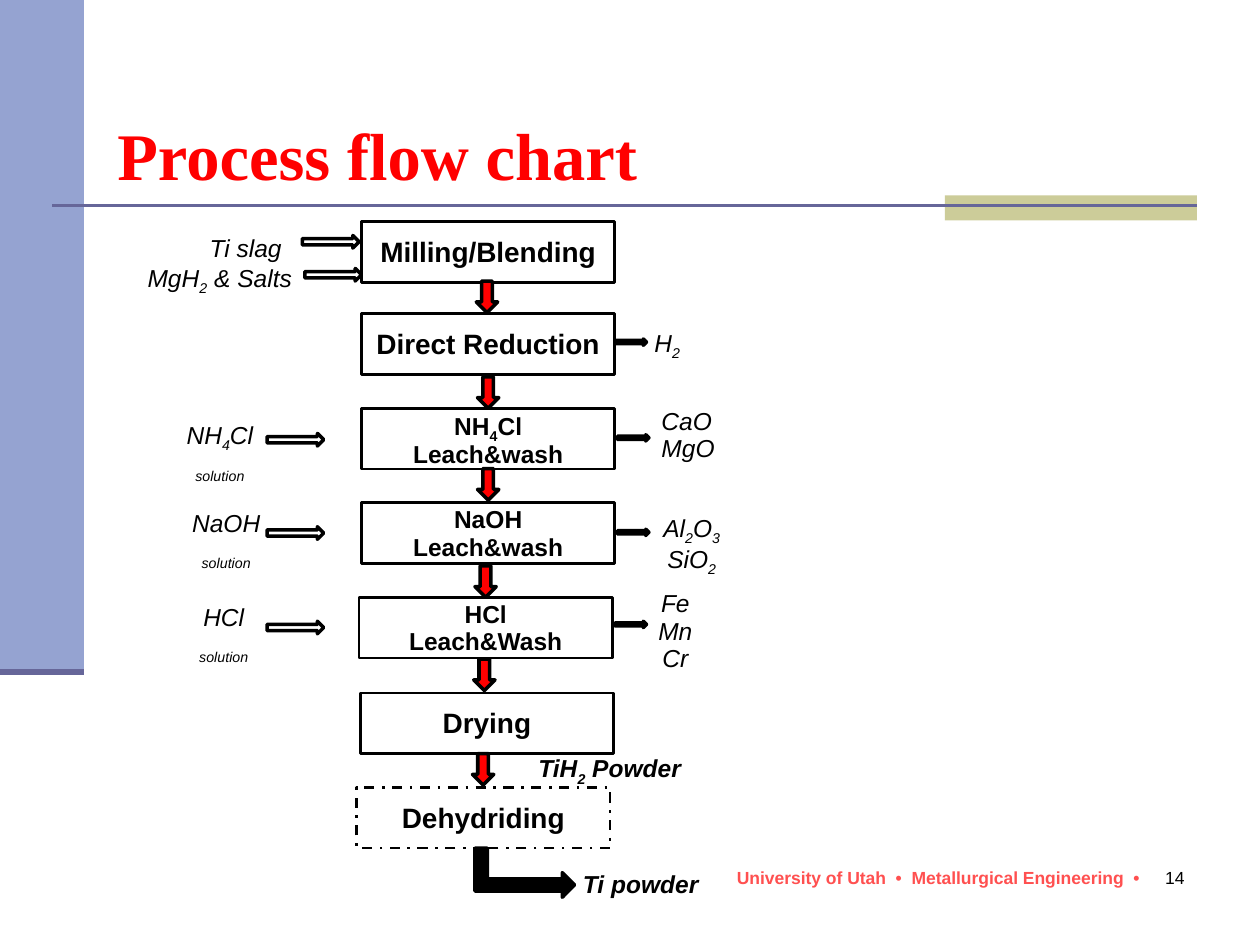
from lxml import etree
from pptx import Presentation
from pptx import util as u
from pptx.dml.color import RGBColor
from pptx.enum import dml, shapes, text
from pptx.oxml.ns import qn

BLACK, WHITE = RGBColor(0, 0, 0), RGBColor(255, 255, 255)
RED, CORAL = RGBColor(255, 0, 0), RGBColor(0xFF, 0x50, 0x50)
BLUE, SLATE = RGBColor(0x95, 0xA3, 0xD1), RGBColor(0x66, 0x66, 0x99)
SAND = RGBColor(0xCC, 0xCC, 0x99)
KIND, MID = shapes.MSO_SHAPE, text.PP_ALIGN.CENTER
INSET = (7.92, 5.76, 7.92, 4.32)
PLAIN = (7.2, 3.6, 7.2, 3.6)

# Content; a part between underscores is a subscript
# Steps: left, top, size, lines
STEPS = [
    (206.6, 126.7, 16, ["Milling/Blending"]),
    (206.6, 179.3, 16, ["Direct Reduction"]),
    (206.6, 233.3, 14, ["NH_4_Cl", "Leach&wash"]),
    (206.6, 287.3, 14, ["NaOH", "Leach&wash"]),
    (205.2, 341.3, 14, ["HCl", "Leach&Wash"]),
    (205.9, 396, 16, ["Drying"]),
    (203.8, 450, 16, ["Dehydriding"]),
]
STEP_W, STEP_H = 144.7, 34.6

# Labels: box, lines, alignment, bold
LABELS = [
    ((90, 129, 100.8, 16), ["Ti slag"], MID, False),
    ((66.2, 144.7, 118.8, 15.8), ["MgH_2_ & Salts"], MID, False),
    ((93.6, 234, 64.1, 33.8), ["NH_4_Cl", "_solution_"], MID, False),
    ((97.2, 285.8, 64.1, 34.6), ["NaOH", "_solution_"], MID, False),
    ((95.8, 339.8, 64.1, 35.3), ["HCl", "_solution_"], MID, False),
    ((365.8, 181.4, 31, 32.4), ["H_2_"], MID, False),
    ((370.1, 227.5, 52.6, 42.5), ["CaO", "MgO"], None, False),
    ((366.5, 287.3, 57.6, 25.2), ["Al_2_O_3_", "SiO_2_"], MID, False),
    ((348.5, 331.9, 74.9, 28.1), ["Fe", "Mn", "Cr"], MID, False),
    ((289.4, 424.8, 118.1, 25.9), ["TiH_2_ Powder"], MID, True),
    ((324.7, 492.5, 82.8, 24.5), ["Ti powder"], MID, True),
]

# Arrows: preset, width, height, fill, (left, top) of each
ARROWS = [
    (KIND.RIGHT_ARROW, 32.4, 7.2, None,
     [(172.8, 134.6), (174.2, 153.4), (152.6, 247.7), (152.6, 301), (152.6, 355)]),
    (KIND.RIGHT_ARROW, 18, 3.6, BLACK,
     [(351.4, 193.7), (352.8, 248.4), (352.8, 302.4), (351.4, 355)]),
    (KIND.DOWN_ARROW, 12.2, 18, RED,
     [(272.2, 160.6), (272.9, 215.3), (272.9, 267.8),
      (271.4, 323.3), (270.7, 376.6), (270, 430.6)]),
]

deck = Presentation()
deck.slide_width, deck.slide_height = u.Pt(720), u.Pt(540)
page = deck.slides.add_slide(deck.slide_layouts[6])


def form(kind, box, fill=None, edge=None, wide=2):
    item = page.shapes.add_shape(kind, *map(u.Pt, box))
    item.shadow.inherit = False
    if fill is None:
        item.fill.background()
    else:
        item.fill.solid()
        item.fill.fore_color.rgb = fill
    if edge is None:
        item.line.fill.background()
    else:
        item.line.color.rgb = edge
        item.line.width = u.Pt(wide)
    return item


def rule(x1, y1, x2, y2, wide):
    line = page.shapes.add_connector(
        shapes.MSO_CONNECTOR.STRAIGHT, *map(u.Pt, (x1, y1, x2, y2)))
    line.line.color.rgb = SLATE
    line.line.width = u.Pt(wide)
    etree.SubElement(line._element.spPr, qn("a:effectLst"))


def write(item, lines, size, color=BLACK, face="Arial", bold=False, slant=False,
          align=None, space=0.93, inset=INSET, anchor=text.MSO_ANCHOR.TOP, wrap=True):
    frame = item.text_frame
    frame.word_wrap, frame.vertical_anchor = wrap, anchor
    (frame.margin_left, frame.margin_top,
     frame.margin_right, frame.margin_bottom) = map(u.Pt, inset)
    for row, words in enumerate(lines):
        para = frame.add_paragraph() if row else frame.paragraphs[0]
        para.alignment, para.line_spacing = align, space
        for part, chunk in enumerate(words.split("_")):
            if not chunk:
                continue
            run = para.add_run()
            run.text = chunk
            font = run.font
            font.name, font.size = face, u.Pt(size)
            font.bold, font.italic = bold, slant
            font.color.rgb = color
            if part % 2:
                run._r.get_or_add_rPr().set("baseline", "-25000")


def label(box, lines, size, **style):
    write(page.shapes.add_textbox(*map(u.Pt, box)), lines, size, **style)


# Side band, accent bar and rules
form(KIND.RECTANGLE, (0, 0, 48, 384), BLUE)
form(KIND.RECTANGLE, (540, 111.6, 144, 14.4), SAND)
rule(30, 117.6, 684, 117.6, 1.5)
rule(0, 384, 48, 384, 3.5)

# Title, footer and page number
label((60, 60, 642, 54), ["Process flow chart"], 38, color=RED, bold=True,
      face="Times New Roman", space=1, inset=PLAIN, anchor=text.MSO_ANCHOR.BOTTOM)
label((414, 492, 249, 19.4), ["University of Utah  •  Metallurgical Engineering  •"],
      10, color=CORAL, bold=True, space=1, inset=PLAIN, wrap=False)
label((534, 492, 150, 36), ["14"], 10, align=text.PP_ALIGN.RIGHT, space=1, inset=PLAIN)

# Process steps; the last one is optional and dashed
for left, top, size, lines in STEPS:
    step = form(KIND.RECTANGLE, (left, top, STEP_W, STEP_H), WHITE, BLACK, 1.45)
    write(step, lines, size, bold=True, align=MID, anchor=text.MSO_ANCHOR.MIDDLE)
step.line.dash_style = dml.MSO_LINE.DASH_DOT

# Inputs and outputs
for box, lines, align, bold in LABELS:
    label(box, lines, 14, bold=bold, slant=True, align=align)

# Arrows
for kind, wide, high, fill, spots in ARROWS:
    for left, top in spots:
        form(kind, (left, top, wide, high), fill, BLACK)
bend = form(KIND.BENT_UP_ARROW, (285.8, 470.2, 28.1, 56.9), BLACK, BLACK)
bend.rotation = 90

deck.save("out.pptx")
